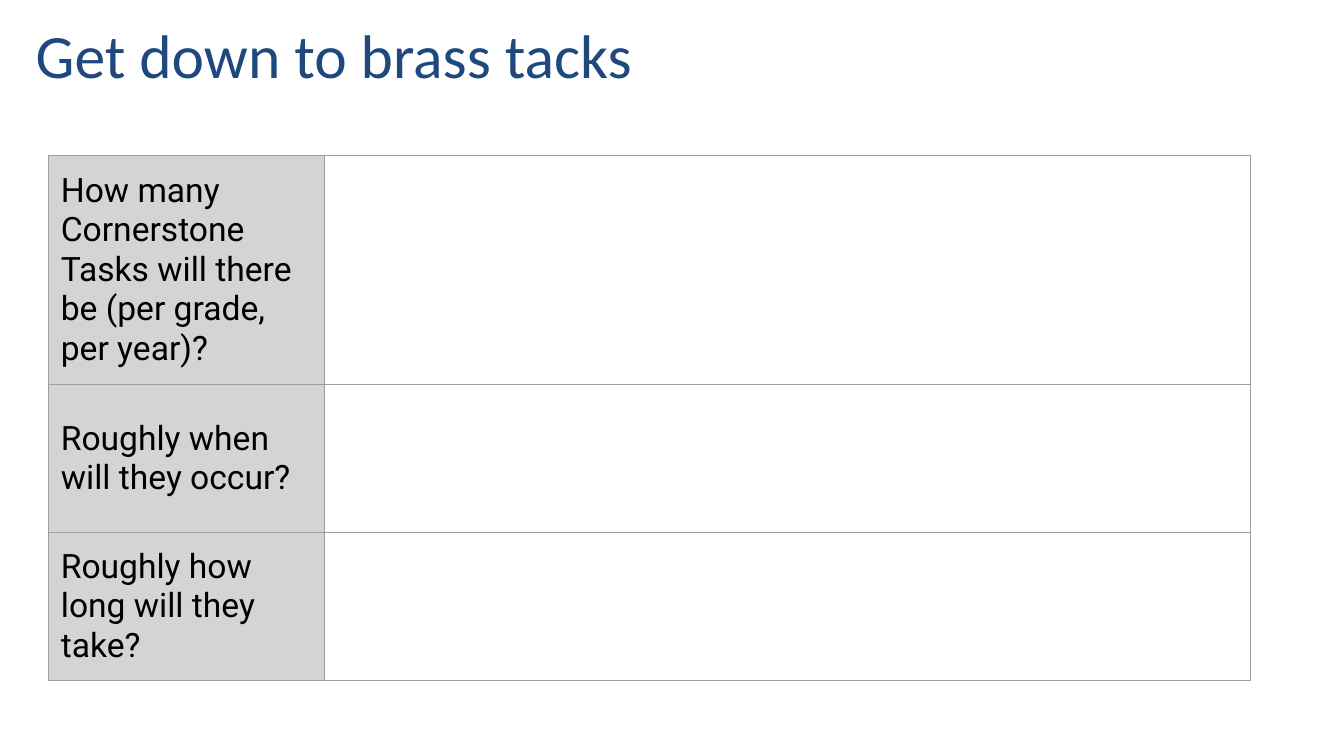
import pptx
import pptx.dml.color
import pptx.enum.text
import pptx.oxml
import pptx.oxml.ns
import pptx.util

PX = 9525  # EMU, at 96 px to the inch
INSET = 12
BORDER_COLOR = "9E9E9E"
QUESTIONS = [
    ("How many Cornerstone Tasks will there be (per grade, per year)?", 218),
    ("Roughly when will they occur?", 141),
    ("Roughly how long will they take?", 141),
]
COLUMN_WIDTHS = [263, 882]


def px(length):
    return pptx.util.Emu(length * PX)


def rgb(color):
    return pptx.dml.color.RGBColor.from_string(color)


def format_text(frame, font_name, size, color):
    for paragraph in frame.paragraphs:
        paragraph.alignment = pptx.enum.text.PP_ALIGN.LEFT
        for run in paragraph.runs:
            run.font.name = font_name
            run.font.size = pptx.util.Pt(size)
            run.font.color.rgb = rgb(color)


def set_insets(holder):
    """Give a text frame or a table cell the same margin on each side."""
    holder.margin_left = holder.margin_right = px(INSET)
    holder.margin_top = holder.margin_bottom = px(INSET)


def add_title(slide, text):
    title = slide.shapes.title
    title.left, title.top, title.width, title.height = map(px, (22, 12, 1226, 69))
    frame = title.text_frame
    frame.text = text
    frame.word_wrap = True
    frame.auto_size = pptx.enum.text.MSO_AUTO_SIZE.NONE
    frame.vertical_anchor = pptx.enum.text.MSO_ANCHOR.TOP
    set_insets(frame)
    frame.paragraphs[0].line_spacing = 0.9
    format_text(frame, "Calibri", 44, "1F497D")


def set_borders(cell):
    properties = cell._tc.get_or_add_tcPr()
    for side in ("lnL", "lnR", "lnT", "lnB"):
        properties.append(pptx.oxml.parse_xml(
            f'<a:{side} {pptx.oxml.ns.nsdecls("a")} w="{pptx.util.Pt(0.75)}">'
            f'<a:solidFill><a:srgbClr val="{BORDER_COLOR}"/></a:solidFill></a:{side}>'
        ))


def add_question_table(slide):
    heights = [height for _, height in QUESTIONS]
    table = slide.shapes.add_table(
        len(QUESTIONS), len(COLUMN_WIDTHS),
        px(46), px(148), px(sum(COLUMN_WIDTHS)), px(sum(heights)),
    ).table
    table.first_row = table.horz_banding = False
    for column, width in zip(table.columns, COLUMN_WIDTHS):
        column.width = px(width)
    for row, (question, height) in zip(table.rows, QUESTIONS):
        row.height = px(height)
        for cell in row.cells:
            set_borders(cell)
            set_insets(cell)
            cell.vertical_anchor = pptx.enum.text.MSO_ANCHOR.MIDDLE
            cell.fill.background()
        label = row.cells[0]
        label.fill.solid()
        label.fill.fore_color.rgb = rgb("D4D4D4")
        label.text_frame.text = question
        format_text(label.text_frame, "Roboto", 24, "000000")


def main():
    deck = pptx.Presentation()
    deck.slide_width, deck.slide_height = px(1280), px(720)
    slide = deck.slides.add_slide(deck.slide_layouts[5])
    add_title(slide, "Get down to brass tacks")
    add_question_table(slide)
    deck.save("out.pptx")


if __name__ == "__main__":
    main()
